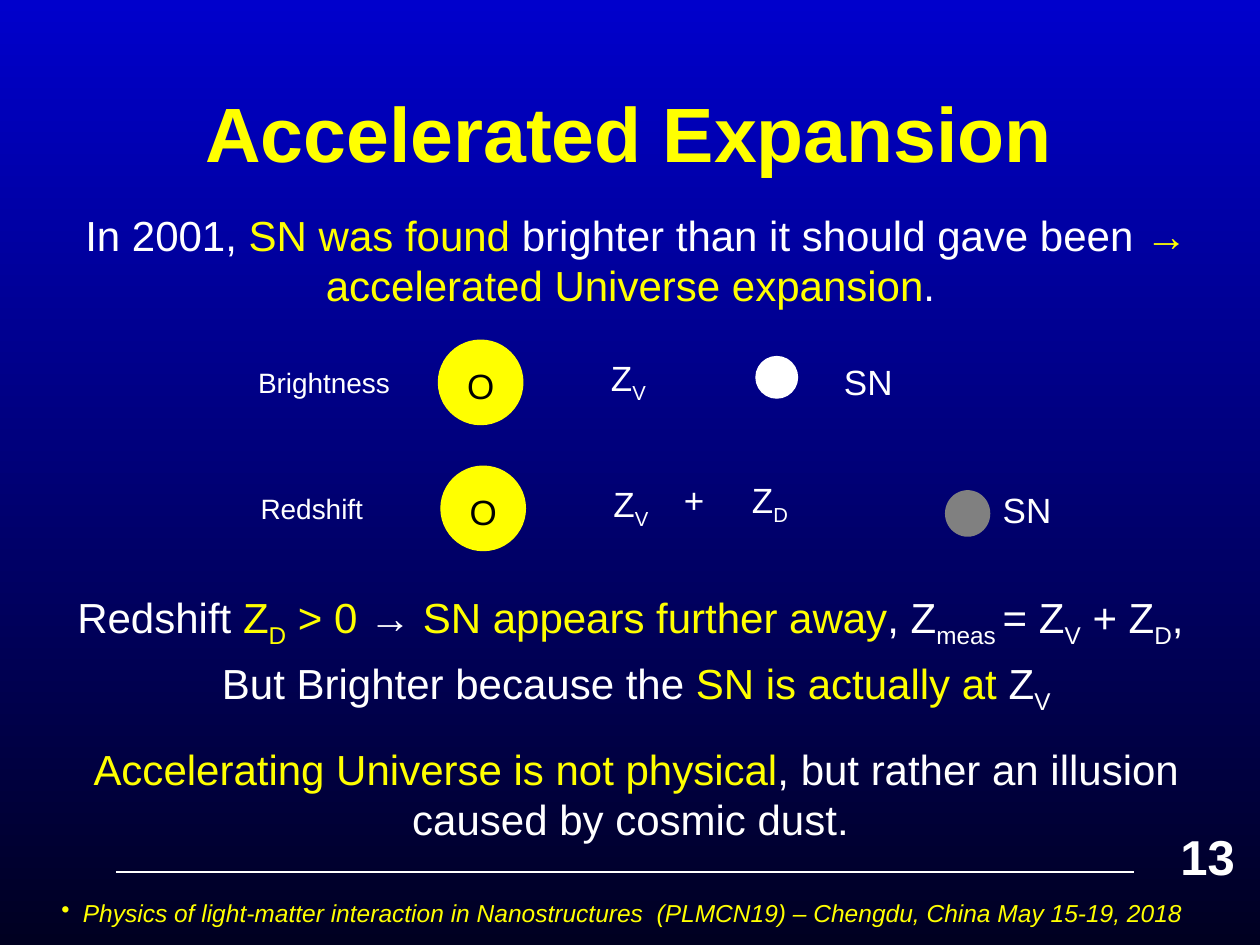
import pptx
import pptx.util
import pptx.dml.color
import pptx.enum.shapes
import pptx.enum.text
import pptx.oxml.ns
import lxml.etree

YELLOW, WHITE, BLACK, GREY = "FFFF00", "FFFFFF", "000000", "808080"
COLS, ROWS = 100, 75
ALIGN = pptx.enum.text.PP_ALIGN
ANCHOR = pptx.enum.text.MSO_ANCHOR


def rgb(value):
    return pptx.dml.color.RGBColor.from_string(value)


class Deck:
    """Holds the style and the current slide; lengths are grid columns and rows."""

    font = "Arial"

    def __init__(self):
        self.prs = pptx.Presentation()
        self.prs.slide_width = pptx.util.Inches(10)
        self.prs.slide_height = pptx.util.Inches(7.5)
        self.s = self.prs.slides.add_slide(self.prs.slide_layouts[6])

    def x(self, col):
        return round(self.prs.slide_width * col / COLS)

    def y(self, row):
        return round(self.prs.slide_height * row / ROWS)

    def box(self, x, y, w, h):
        return self.x(x), self.y(y), self.x(w), self.y(h)

    def background(self, top, bottom):
        fill = self.s.background.fill
        fill.gradient()
        fill.gradient_angle = 270
        for stop, value in zip(fill.gradient_stops, (top, bottom)):
            stop.color.rgb = rgb(value)

    def text(self, at, paragraphs, size, color=WHITE, align=ALIGN.LEFT,
             anchor=ANCHOR.TOP, gaps=None, **style):
        """Each paragraph is a list of (text, colour or None, is subscript)."""
        tf = self.s.shapes.add_textbox(*self.box(*at)).text_frame
        tf.word_wrap = True
        tf.vertical_anchor = anchor
        for i, runs in enumerate(paragraphs):
            p = tf.paragraphs[0] if i == 0 else tf.add_paragraph()
            p.alignment = align
            p.space_before = pptx.util.Pt(gaps[i] if gaps else 0)
            for words, tint, sub in runs:
                r = p.add_run()
                r.text = words
                values = {"name": self.font, "size": pptx.util.Pt(size), **style}
                for key, value in values.items():
                    setattr(r.font, key, value)
                r.font.color.rgb = rgb(tint or color)
                if sub:
                    r._r.get_or_add_rPr().set("baseline", "-25000")
        return tf

    def label(self, at, words, size=20, color=WHITE, sub="", **style):
        runs = [(words, None, False)]
        if sub:
            runs.append((sub, None, True))
        return self.text(at, [runs], size, color, **style)

    def bullet(self, p, indent):
        pPr = p._p.get_or_add_pPr()
        pPr.set("marL", str(self.x(indent)))
        pPr.set("indent", str(-self.x(indent)))
        bu = lxml.etree.SubElement(pPr, pptx.oxml.ns.qn("a:buChar"))
        bu.set("char", "•")

    def disc(self, at, color, outlined=True):
        sp = self.s.shapes.add_shape(
            pptx.enum.shapes.MSO_SHAPE.OVAL, *self.box(*at))
        sp.shadow.inherit = False
        sp.fill.solid()
        sp.fill.fore_color.rgb = rgb(color)
        if outlined:
            sp.line.color.rgb = rgb(color)
            sp.line.width = pptx.util.Pt(0.75)
        else:
            sp.line.fill.background()

    def rule(self, x1, x2, y, color):
        cn = self.s.shapes.add_connector(
            pptx.enum.shapes.MSO_CONNECTOR.STRAIGHT,
            self.x(x1), self.y(y), self.x(x2), self.y(y))
        cn.line.color.rgb = rgb(color)
        cn.line.width = pptx.util.Pt(0.75)
        lxml.etree.SubElement(cn._element.spPr, pptx.oxml.ns.qn("a:effectLst"))

    def observer_row(self, x, y, name):
        """Row name, yellow observer and velocity redshift."""
        self.disc((x + 15.3, y, 6.7, 6.7), YELLOW)
        self.label((x, y + 1.5, 15.3, 3.7), name, size=16)
        self.label((x + 16.6, y + 1.4, 6, 4.4), "O", color=BLACK)
        self.label((x + 28, y + 0.8, 7.4, 4.4), "Z", sub="V")


def main():
    d = Deck()
    d.background("0000CC", "000021")

    # Title, footer and page number
    d.rule(9.2, 90, 69.2, WHITE)
    d.label((8.3, 4.2, 85, 12.5), "Accelerated Expansion ", size=44,
            color=YELLOW, align=ALIGN.CENTER, anchor=ANCHOR.MIDDLE, bold=True)
    footer = d.label(
        (3.3, 70.8, 92.2, 4.2),
        "Physics of light-matter interaction in Nanostructures  (PLMCN19)"
        " – Chengdu, China May 15-19, 2018",
        size=14, color=YELLOW, align=ALIGN.CENTER, italic=True)
    d.bullet(footer.paragraphs[0], 1.7)
    d.label((92.7, 65.1, 7.3, 5.7), "13", size=28, bold=True)

    # Statements above and below the diagram
    d.text((4.1, 16.1, 92.8, 51.9), [
        [("In 2001, ", None, False), ("SN was found ", YELLOW, False),
         ("brighter than it should gave been ", None, False),
         ("→ accelerated Universe expansion", YELLOW, False),
         (". ", None, False)],
        [("Redshift ", None, False), ("Z", YELLOW, False), ("D", YELLOW, True),
         (" > 0 ", YELLOW, False), ("→", None, False),
         (" SN appears further away", YELLOW, False), (", Z", None, False),
         ("meas ", None, True), ("= Z", None, False), ("V", None, True),
         (" + Z", None, False), ("D", None, True), (", ", None, False)],
        [("But Brighter because the ", None, False),
         ("SN is actually at ", YELLOW, False),
         ("Z", None, False), ("V", None, True)],
        [("Accelerating Universe is not physical", YELLOW, False),
         (", but rather an illusion caused by cosmic dust. ", None, False)],
    ], 24, align=ALIGN.CENTER, gaps=[5, 161, 5, 16])

    # Brightness row: supernova at its actual distance
    d.observer_row(19.5, 27, "Brightness")
    d.disc((60, 28.3, 3.3, 3.3), WHITE)
    d.label((66, 28.1, 7.4, 4.4), "SN")

    # Redshift row: dust redshift moves the supernova further away
    d.observer_row(19.7, 37, "Redshift")
    d.label((53.3, 37.5, 4, 4.4), "+")
    d.label((58.7, 37.5, 7.4, 4.4), "Z", sub="D")
    d.disc((75, 38.9, 3.6, 3.7), GREY, outlined=False)
    d.label((78.6, 38.3, 8, 4.8), "SN")

    d.prs.save("out.pptx")


if __name__ == "__main__":
    main()
